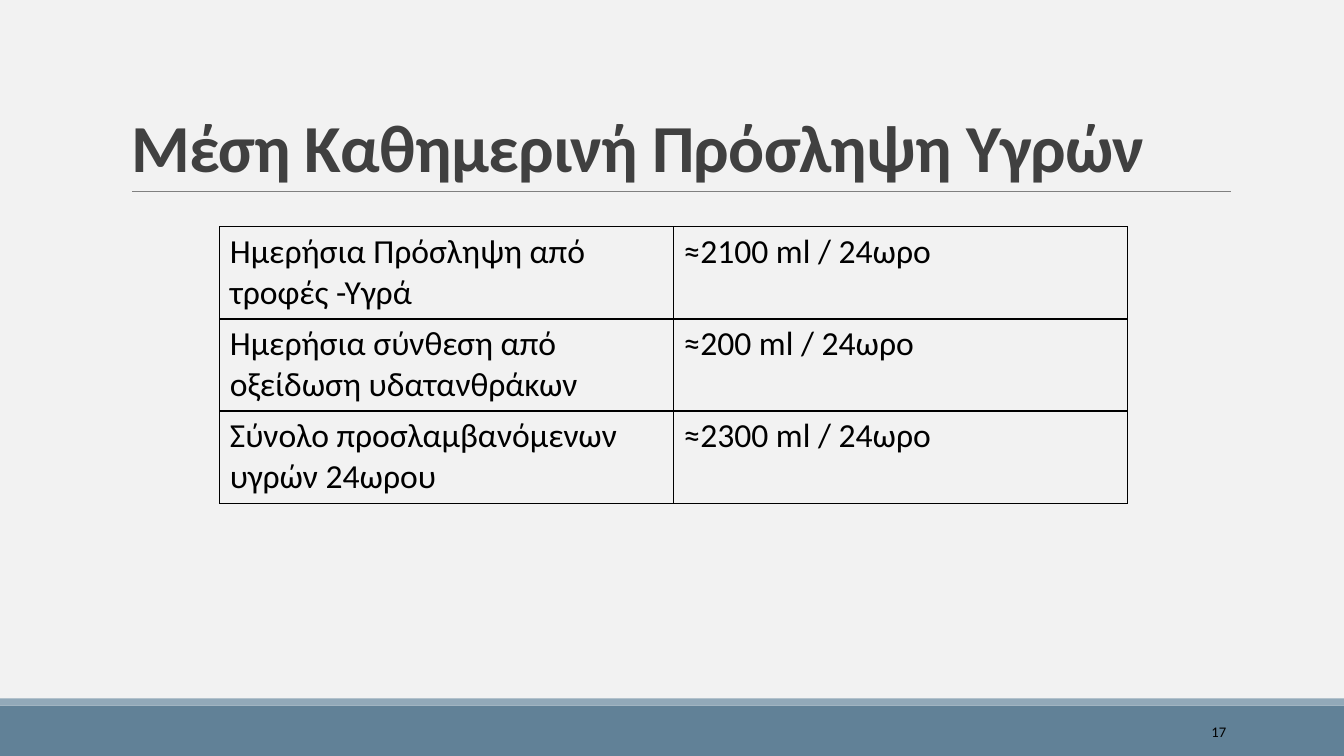
from dataclasses import dataclass

from lxml.etree import SubElement
from pptx import Presentation
from pptx.dml.color import RGBColor
from pptx.enum.shapes import MSO_CONNECTOR, MSO_SHAPE
from pptx.enum.text import MSO_ANCHOR, MSO_AUTO_SIZE, PP_ALIGN
from pptx.oxml.ns import qn
from pptx.util import Inches, Pt

TITLE = "Μέση Καθημερινή Πρόσληψη Υγρών"
FLUID_ROWS = [
    ("Ημερήσια Πρόσληψη από τροφές -Υγρά", "≈2100 ml / 24ωρο"),
    ("Ημερήσια σύνθεση από οξείδωση υδατανθράκων", "≈200 ml / 24ωρο"),
    ("Σύνολο προσλαμβανόμενων υγρών 24ωρου", "≈2300 ml / 24ωρο"),
]
PAGE_NUMBER = "17"


@dataclass(frozen=True)
class Theme:
    font: str = "Calibri"
    background: str = "F2F2F2"
    band: str = "618197"
    band_edge: str = "92A9B9"
    rule: str = "808080"
    title: str = "404040"
    text: str = "000000"
    title_size: float = 48
    table_size: float = 24
    number_size: float = 10.5


THEME = Theme()
PAGE_WIDTH, PAGE_HEIGHT = 13.33, 7.5
FOOTER_BANDS = [(7, 0.5, THEME.band), (6.93, 0.07, THEME.band_edge)]
COLUMN_WIDTH, ROW_HEIGHT = 4.5, 0.91


def inches(*lengths):
    return [Inches(length) for length in lengths]


def write(frame, text, size, color, bold=False, align=PP_ALIGN.LEFT):
    para = frame.paragraphs[0]
    para.alignment = align
    span = para.add_run()
    span.text = text
    formats = {"name": THEME.font, "size": Pt(size), "bold": bold}
    for name, value in formats.items():
        setattr(span.font, name, value)
    span.font.color.rgb = RGBColor.from_string(color)
    return para, span


def add_backdrop(page):
    page.background.fill.solid()
    page.background.fill.fore_color.rgb = RGBColor.from_string(THEME.background)
    for top, height, color in FOOTER_BANDS:
        band = page.shapes.add_shape(
            MSO_SHAPE.RECTANGLE, *inches(0, top, PAGE_WIDTH, height))
        band.shadow.inherit = False
        band.fill.solid()
        band.fill.fore_color.rgb = RGBColor.from_string(color)
        band.line.fill.background()
    rule = page.shapes.add_connector(
        MSO_CONNECTOR.STRAIGHT, *inches(1.31, 1.9, 12.21, 1.9))
    rule.line.color.rgb = RGBColor.from_string(THEME.rule)
    rule.line.width = Pt(0.5)
    SubElement(rule.element.spPr, qn("a:effectLst"))


def add_title(page):
    box = page.shapes.title
    box.left, box.top, box.width, box.height = inches(1.2, 0.31, 11, 1.59)
    frame = box.text_frame
    frame.auto_size = MSO_AUTO_SIZE.NONE
    frame.vertical_anchor = MSO_ANCHOR.BOTTOM
    para, span = write(frame, TITLE, THEME.title_size, THEME.title, bold=True)
    para.line_spacing = 0.85
    span.font._element.set("spc", "-50")


def add_borders(cell):
    properties = cell._tc.get_or_add_tcPr()
    for index, side in enumerate(("a:lnL", "a:lnR", "a:lnT", "a:lnB")):
        border = properties.makeelement(qn(side), {"w": str(Pt(1))})
        fill = SubElement(border, qn("a:solidFill"))
        SubElement(fill, qn("a:srgbClr"), val=THEME.text)
        properties.insert(index, border)


def add_fluid_table(page):
    row_count, column_count = len(FLUID_ROWS), len(FLUID_ROWS[0])
    table = page.shapes.add_table(
        row_count, column_count,
        *inches(2.18, 2.25, column_count * COLUMN_WIDTH, row_count * ROW_HEIGHT),
    ).table
    table.first_row = table.horz_banding = False
    for row, texts in zip(table.rows, FLUID_ROWS):
        for cell, text in zip(row.cells, texts):
            cell.fill.background()
            add_borders(cell)
            write(cell.text_frame, text, THEME.table_size, THEME.text)


def add_page_number(page):
    box = page.shapes.add_textbox(*inches(10.83, 7.06, 1.43, 0.4))
    box.text_frame.word_wrap = True
    box.text_frame.vertical_anchor = MSO_ANCHOR.MIDDLE
    write(box.text_frame, PAGE_NUMBER, THEME.number_size, THEME.text,
          align=PP_ALIGN.RIGHT)


def main():
    deck = Presentation()
    deck.slide_width, deck.slide_height = inches(PAGE_WIDTH, PAGE_HEIGHT)
    title_only = deck.slide_layouts.get_by_name("Title Only")
    page = deck.slides.add_slide(title_only)
    add_backdrop(page)
    add_title(page)
    add_fluid_table(page)
    add_page_number(page)
    deck.save("out.pptx")


if __name__ == "__main__":
    main()
